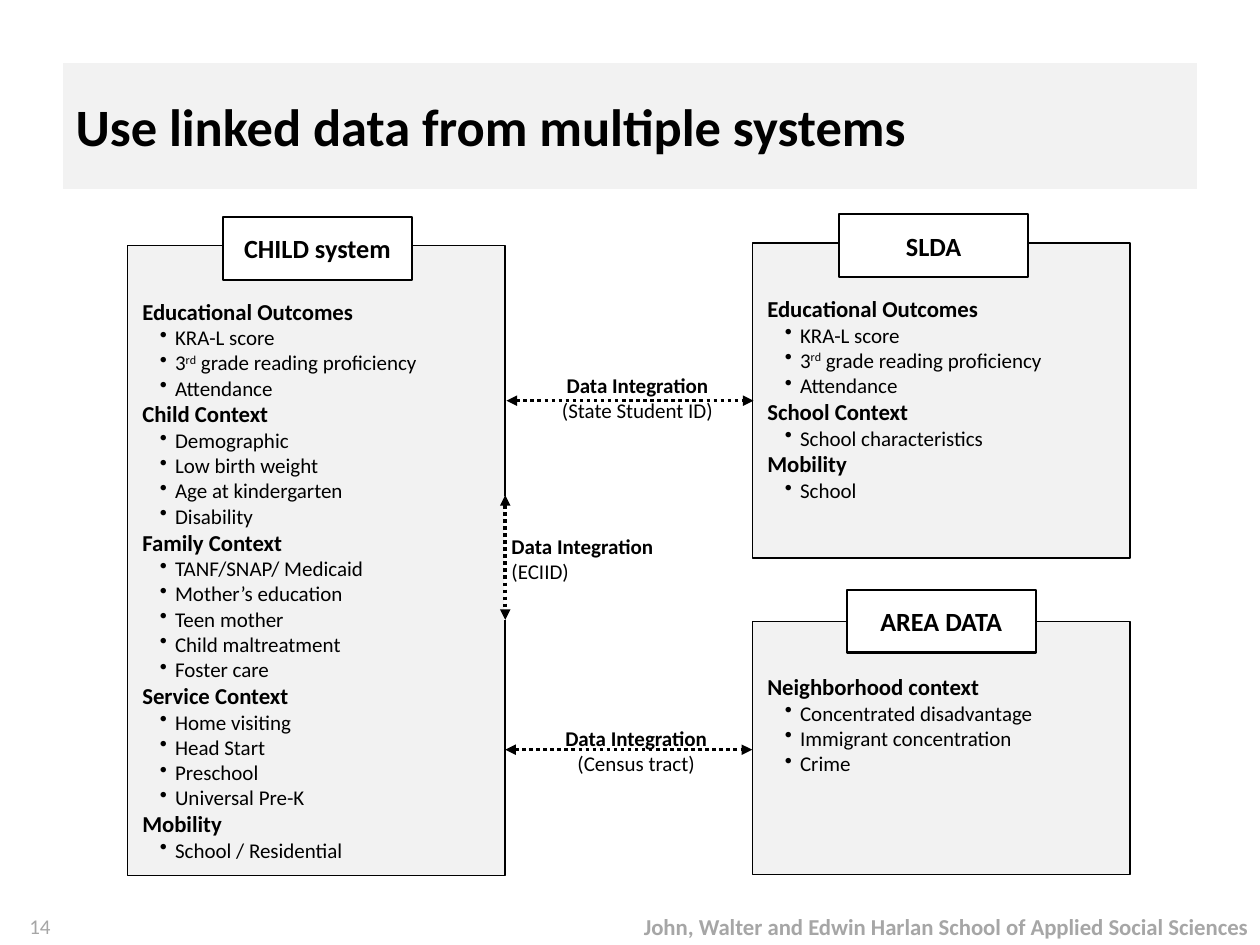
from pptx import Presentation
from pptx.dml.color import RGBColor
from pptx.enum.dml import MSO_LINE_DASH_STYLE as Dash
from pptx.enum.shapes import MSO_CONNECTOR as Connector, MSO_SHAPE as Shape
from pptx.enum.text import MSO_ANCHOR as Anchor, MSO_AUTO_SIZE as AutoSize, PP_ALIGN as Align
from pptx.oxml.ns import qn
from pptx.util import Inches, Pt
from lxml.etree import SubElement

BLACK, WHITE, PANEL, MUTED = "000000", "FFFFFF", "F2F2F2", "A6A6A6"
FONT = "Calibri"
HEADING = {"size": Pt(13), "bold": True}
ITEM = {"size": Pt(12), "bold": False}
NAME = {"size": Pt(15), "bold": True}
SIDES = ("left", "top", "right", "bottom")

# A tuple item is (text, superscript, text)
OUTCOMES = ("Educational Outcomes",
            ["KRA-L score", ("3", "rd", " grade reading proficiency"), "Attendance"])

# Panel position, name box position, name, groups of headings and items
SYSTEMS = [
    ((1.01, 1.95, 3, 5), (1.77, 1.72), "CHILD system", [
        OUTCOMES,
        ("Child Context", ["Demographic", "Low birth weight", "Age at kindergarten", "Disability"]),
        ("Family Context", ["TANF/SNAP/ Medicaid", "Mother’s education", "Teen mother",
                            "Child maltreatment", "Foster care"]),
        ("Service Context", ["Home visiting", "Head Start", "Preschool", "Universal Pre-K"]),
        ("Mobility", ["School / Residential"]),
    ]),
    ((5.97, 1.93, 3, 2.5), (6.66, 1.7), "SLDA", [
        OUTCOMES,
        ("School Context", ["School characteristics"]),
        ("Mobility", ["School"]),
    ]),
    ((5.97, 4.93, 3, 2.01), (6.72, 4.68), "AREA DATA", [
        ("Neighborhood context", ["Concentrated disadvantage", "Immigrant concentration", "Crime"]),
    ]),
]

# Arrow start, arrow end, label position, linking key, label alignment, first-line indent
LINKS = [
    ((4.02, 3.18), (5.98, 3.18), (4.02, 2.93, 1.96, 0.45), "(State Student ID)", Align.CENTER, 0.12),
    ((4.01, 5.95), (5.97, 5.95), (4.01, 5.73, 1.96, 0.45), "(Census tract)", Align.CENTER, 0.12),
    ((4.01, 3.93), (4.01, 4.92), (4, 3.94, 1.33, 0.98), "(ECIID)", Align.LEFT, 0.06),
]


def color(value):
    return RGBColor.from_string(value)


def inches(values):
    return [Inches(value) for value in values]


def set_frame(frame, anchor=Anchor.MIDDLE, margins=(0, 0, 0, 0)):
    frame.word_wrap = True
    frame.auto_size = AutoSize.NONE
    frame.vertical_anchor = anchor
    for side, margin in zip(SIDES, margins):
        setattr(frame, f"margin_{side}", Inches(margin))


def add_run(para, text, style, fill=BLACK):
    span = para.add_run()
    span.text = text
    span.font.name = FONT
    span.font.color.rgb = color(fill)
    for key, value in style.items():
        setattr(span.font, key, value)
    return span


def next_para(frame, align=Align.LEFT, left=0, first=0):
    used = frame.paragraphs[-1].runs
    para = frame.add_paragraph() if used else frame.paragraphs[0]
    para.alignment = align
    properties = para._p.get_or_add_pPr()
    properties.set("marL", str(Inches(left)))
    properties.set("indent", str(Inches(first)))
    return para


def add_box(page, place, fill, line_width=None):
    box = page.shapes.add_shape(Shape.RECTANGLE, *inches(place))
    box.shadow.inherit = False
    box.fill.solid()
    box.fill.fore_color.rgb = color(fill)
    if line_width:
        box.line.color.rgb = color(BLACK)
        box.line.width = Pt(line_width)
    else:
        box.line.fill.background()
    return box


def add_item(frame, item):
    para = next_para(frame, left=0.38, first=-0.12)
    SubElement(para._p.get_or_add_pPr(), qn("a:buChar")).set("char", "•")
    parts = item if isinstance(item, tuple) else (item,)
    for index, part in enumerate(parts):
        span = add_run(para, part, ITEM)
        if index == 1:
            span.font._element.set("baseline", "30000")


def add_system(page, place, name_place, name, groups):
    frame = add_box(page, place, PANEL, 0.75).text_frame
    set_frame(frame, Anchor.TOP, (0, 0.41, 0, 0))
    for heading, items in groups:
        add_run(next_para(frame, first=0.12), heading, HEADING)
        for item in items:
            add_item(frame, item)
    label = add_box(page, (*name_place, 1.5, 0.5), WHITE, 1.25).text_frame
    set_frame(label)
    add_run(next_para(label, Align.CENTER), name, NAME)


def add_arrow(page, start, end):
    arrow = page.shapes.add_connector(Connector.STRAIGHT, *inches(start + end))
    arrow.line.color.rgb = color(BLACK)
    arrow.line.width = Pt(2)
    arrow.line.dash_style = Dash.ROUND_DOT
    line = arrow.line._get_or_add_ln()
    for tag in ("a:headEnd", "a:tailEnd"):
        SubElement(line, qn(tag)).set("type", "triangle")
    SubElement(arrow._element.spPr, qn("a:effectLst"))


def add_link_label(page, place, key, align, first):
    if align == Align.LEFT:
        box = add_box(page, place, WHITE)
    else:
        box = page.shapes.add_textbox(*inches(place))
    set_frame(box.text_frame)
    for text, bold in (("Data Integration", True), (key, False)):
        add_run(next_para(box.text_frame, align, first=first), text, {"size": Pt(12), "bold": bold})


def add_title(page, text):
    title = page.shapes.title
    title.left, title.top, title.width, title.height = inches((0.5, 0.5, 9, 1))
    title.fill.solid()
    title.fill.fore_color.rgb = color(PANEL)
    set_frame(title.text_frame, margins=(0.1, 0.05, 0.1, 0.05))
    add_run(next_para(title.text_frame), text, {"size": Pt(30), "bold": True})


def add_footer(page, place, text, style):
    frame = page.shapes.add_textbox(*inches(place)).text_frame
    set_frame(frame, margins=(0.1, 0.05, 0.1, 0.05))
    add_run(next_para(frame, Align.RIGHT), text, style, MUTED)


def main():
    deck = Presentation()
    deck.slide_width, deck.slide_height = inches((10, 7.5))
    page = deck.slides.add_slide(deck.slide_layouts[5])

    # Title and footer
    add_title(page, "Use linked data from multiple systems")
    add_footer(page, (4, 7.2, 6, 0.3),
               "John, Walter and Edwin Harlan School of Applied Social Sciences", HEADING)
    add_footer(page, (0, 7.2, 0.5, 0.3), "14", ITEM)

    # Data systems
    for system in SYSTEMS:
        add_system(page, *system)

    # Links between systems, with the arrows above the labels
    for _, _, *label in LINKS:
        add_link_label(page, *label)
    for start, end, *_ in LINKS:
        add_arrow(page, start, end)

    deck.save("out.pptx")


if __name__ == "__main__":
    main()
